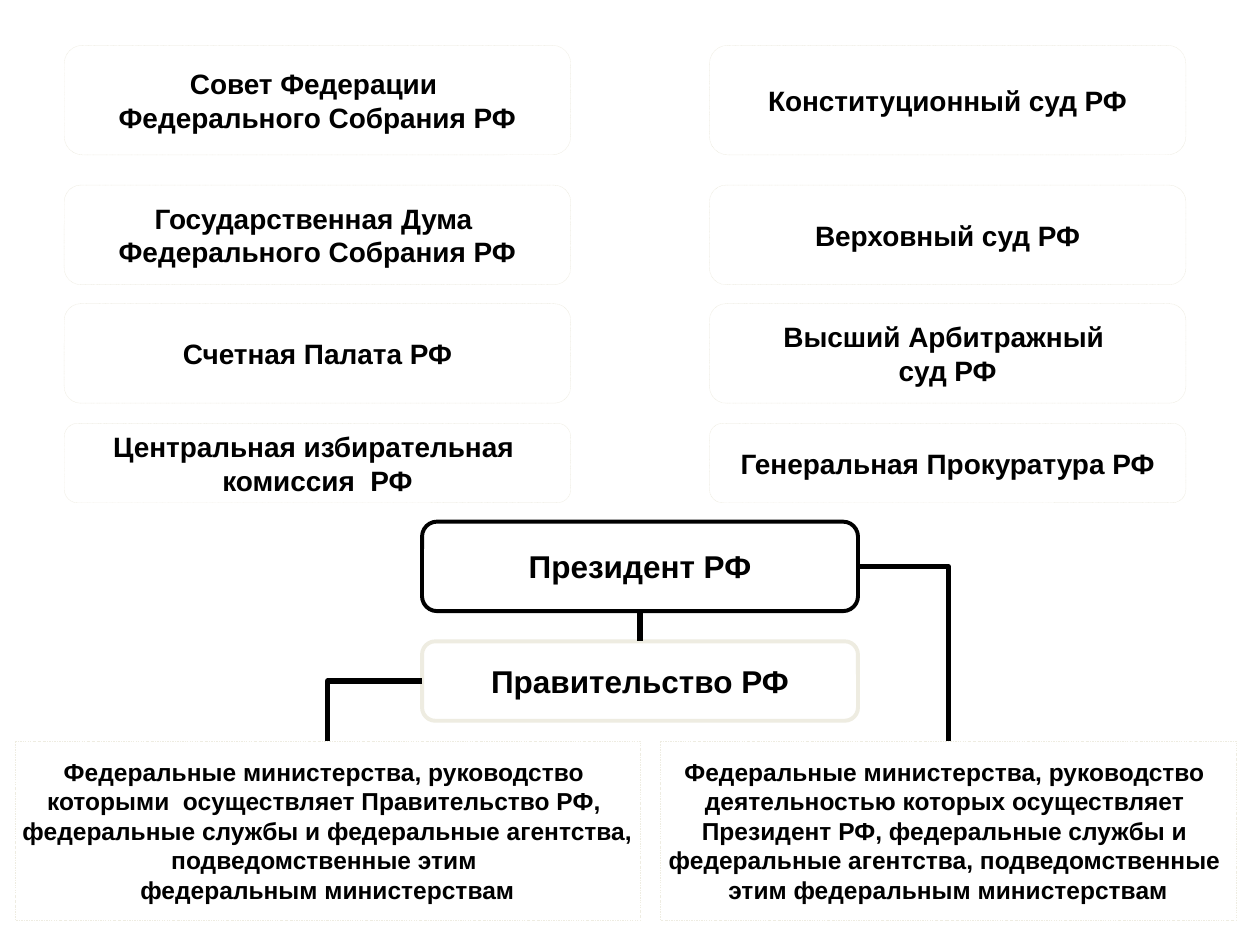
from lxml.etree import SubElement
from pptx import Presentation
from pptx.dml.color import RGBColor
from pptx.enum.dml import MSO_LINE as Dash
from pptx.enum.shapes import MSO_CONNECTOR as Link, MSO_SHAPE as Form
from pptx.enum.text import MSO_ANCHOR as Anchor, PP_ALIGN as Align
from pptx.oxml.ns import qn
from pptx.util import Pt

BLACK, PALE = "000000", "EEECE1"

LEFT = [
    ["Совет Федерации ", "Федерального Собрания РФ"],
    ["Государственная Дума ", "Федерального Собрания РФ"],
    ["Счетная Палата РФ"],
    ["Центральная избирательная ", "комиссия  РФ"],
]
RIGHT = [
    ["Конституционный суд РФ"],
    ["Верховный суд РФ"],
    ["Высший Арбитражный ", "суд РФ"],
    ["Генеральная Прокуратура РФ"],
]
ROWS = [(0, 62.6), (79.9, 56.9), (147.6, 56.9), (216, 45.4)]  # top, height
UNDER_GOV = [
    "Федеральные министерства, руководство ",
    "которыми  осуществляет Правительство РФ, ",
    "федеральные службы и федеральные агентства,",
    "подведомственные этим ",
    "федеральным министерствам",
]
UNDER_PRES = [
    "Федеральные министерства, руководство ",
    "деятельностью которых осуществляет ",
    "Президент РФ, федеральные службы и ",
    "федеральные агентства, подведомственные ",
    "этим федеральным министерствам",
]


def paint(color, code):
    color.rgb = RGBColor.from_string(code)


def add_box(slide, box, lines, size, form=Form.ROUNDED_RECTANGLE,
            code=PALE, width=0.25, dash=None):
    shape = slide.shapes.add_shape(form, *map(Pt, box))
    shape.shadow.inherit = False
    shape.fill.background()
    paint(shape.line.color, code)
    shape.line.width = Pt(width)
    if dash:
        shape.line.dash_style = dash
    frame = shape.text_frame
    frame.word_wrap = False
    frame.vertical_anchor = Anchor.MIDDLE
    for i, line in enumerate(lines):
        para = frame.add_paragraph() if i else frame.paragraphs[0]
        para.alignment = Align.CENTER
        run = para.add_run()
        run.text = line
        run.font.name = "Arial"
        run.font.size = Pt(size)
        run.font.bold = True
        paint(run.font.color, BLACK)
    return shape


def add_link(slide, kind, start, end):
    link = slide.shapes.add_connector(kind, *start, *end)
    paint(link.line.color, BLACK)
    link.line.width = Pt(3)
    props = link._element.spPr
    SubElement(props, qn("a:effectLst"))
    if kind == Link.ELBOW:
        props.find(qn("a:prstGeom")).set("prst", "bentConnector2")
    return link


def side(shape, right):
    """Middle of the left or right side."""
    return shape.left + right * shape.width, shape.top + shape.height // 2


def head(shape):
    """Middle of the top side."""
    return shape.left + shape.width // 2, shape.top


def add_column(slide, x, y, width, items):
    for (top, height), lines in zip(ROWS, items):
        add_box(slide, (x, y + top, width, height), lines, 16,
                dash=Dash.ROUND_DOT)


def add_power(slide, x, y, width):
    pres = add_box(slide, (x, y, width, 51.1), ["Президент РФ"], 18,
                   code=BLACK, width=2.25)
    gov = add_box(slide, (x, y + 68.4, width, 45.4), ["Правительство РФ"], 18,
                  width=2.25)
    link = add_link(slide, Link.STRAIGHT, head(pres), head(gov))
    link.begin_connect(pres, 2)
    link.end_connect(gov, 0)
    return pres, gov


def add_bodies(slide, y, height, pres, gov):
    parts = [(8.6, 357.1, UNDER_GOV, gov, 0), (377.3, 329, UNDER_PRES, pres, 1)]
    for x, width, lines, boss, right in parts:
        body = add_box(slide, (x, y, width, height), lines, 14,
                       form=Form.RECTANGLE, dash=Dash.DASH_DOT)
        add_link(slide, Link.ELBOW, side(boss, right), head(body))


def main():
    deck = Presentation()
    deck.slide_width, deck.slide_height = Pt(720), Pt(540)
    slide = deck.slides.add_slide(deck.slide_layouts[6])
    add_column(slide, 36.7, 25.9, 289.4, LEFT)
    add_column(slide, 405.4, 25.9, 272.2, RIGHT)
    pres, gov = add_power(slide, 241.2, 298.1, 249.1)
    add_bodies(slide, 423.4, 102.2, pres, gov)
    deck.save("out.pptx")


if __name__ == "__main__":
    main()
